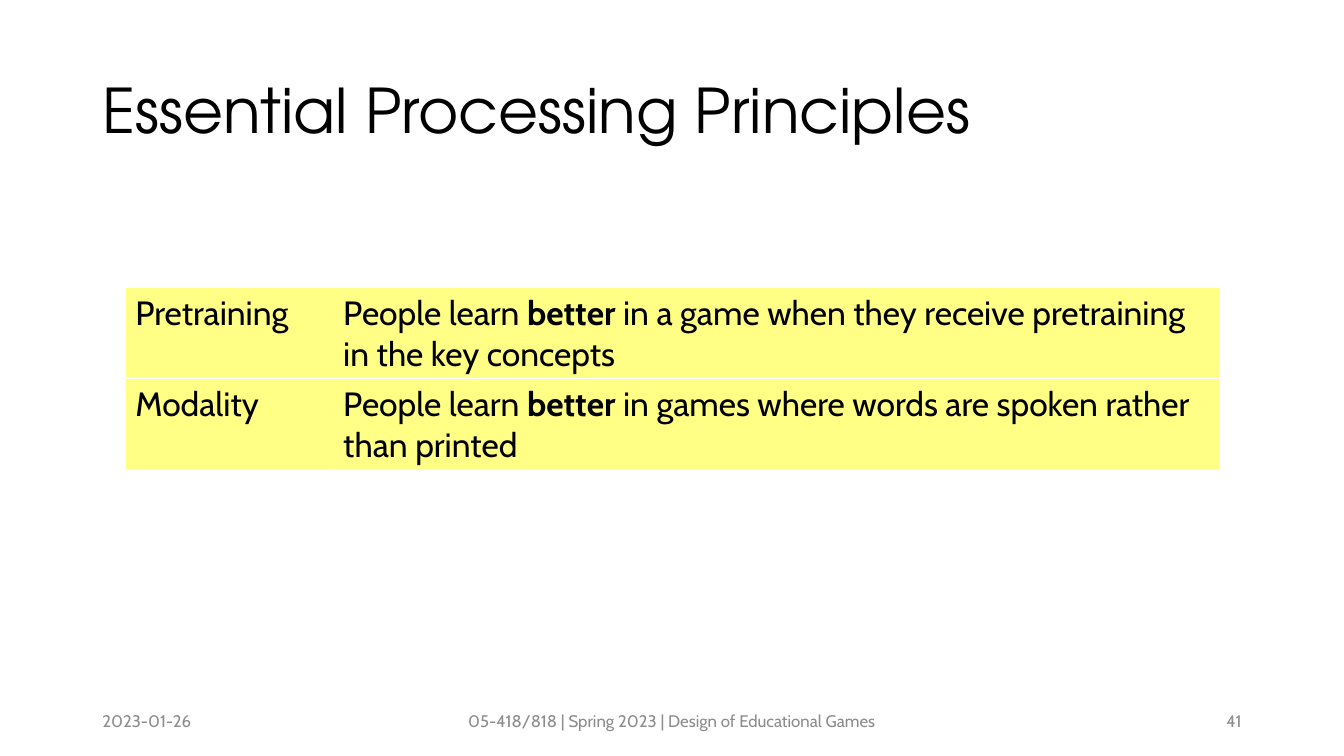
from lxml.etree import SubElement
from pptx import Presentation
from pptx.dml.color import RGBColor
from pptx.enum.text import MSO_ANCHOR, PP_ALIGN
from pptx.oxml.ns import qn
from pptx.util import Pt

BODY_FONT = "Cabin"
TITLE_FONT = "TeX Gyre Adventor"
BLACK, GREY, WHITE, YELLOW = "000000", "8C8C8C", "FFFFFF", "FFFF85"

PRINCIPLES = [
    ("Pretraining", " in a game when they receive pretraining in the key concepts"),
    ("Modality", " in games where words are spoken rather than printed"),
]
COLUMN_WIDTHS = (148.5, 633.5)
ROW_HEIGHT = 65


def color(hex_code):
    return RGBColor.from_string(hex_code)


def add_span(paragraph, text, size, font=BODY_FONT, ink=BLACK, bold=False):
    span = paragraph.add_run()
    span.text = text
    span.font.name = font
    span.font.size = Pt(size)
    span.font.bold = bold
    span.font.color.rgb = color(ink)


def add_text_box(page, left, top, width, height, align=PP_ALIGN.LEFT):
    """Add an empty, vertically centred box and return its first paragraph."""
    box = page.shapes.add_textbox(Pt(left), Pt(top), Pt(width), Pt(height))
    frame = box.text_frame
    frame.word_wrap = True
    frame.vertical_anchor = MSO_ANCHOR.MIDDLE
    paragraph = frame.paragraphs[0]
    paragraph.alignment = align
    return paragraph


def add_title(page, text):
    paragraph = add_text_box(page, 66, 28.8, 828, 104.4)
    paragraph.line_spacing = 0.9
    add_span(paragraph, text, 44, TITLE_FONT)


def add_footer(page, text, left, width, align):
    paragraph = add_text_box(page, left, 500.5, width, 28.8, align)
    add_span(paragraph, text, 12, ink=GREY)


def style_cell(cell):
    """Give the cell thin white borders and a yellow fill."""
    properties = cell._tc.get_or_add_tcPr()
    for side in ("a:lnL", "a:lnR", "a:lnT", "a:lnB"):
        line = SubElement(properties, qn(side), w=str(Pt(1)))
        fill = SubElement(line, qn("a:solidFill"))
        SubElement(fill, qn("a:srgbClr"), val=WHITE)
    cell.fill.solid()
    cell.fill.fore_color.rgb = color(YELLOW)


def add_principles_table(page):
    frame = page.shapes.add_table(
        len(PRINCIPLES), len(COLUMN_WIDTHS), Pt(89.5), Pt(205.5),
        Pt(sum(COLUMN_WIDTHS)), Pt(ROW_HEIGHT * len(PRINCIPLES)))
    table = frame.table
    table.first_row = False
    table.horz_banding = False
    for column, width in zip(table.columns, COLUMN_WIDTHS):
        column.width = Pt(width)
    for row, (name, condition) in zip(table.rows, PRINCIPLES):
        row.height = Pt(ROW_HEIGHT)
        name_cell, statement_cell = row.cells
        style_cell(name_cell)
        style_cell(statement_cell)
        add_span(name_cell.text_frame.paragraphs[0], name, 24)
        statement = statement_cell.text_frame.paragraphs[0]
        add_span(statement, "People learn ", 24)
        add_span(statement, "better", 24, bold=True)
        add_span(statement, condition, 24)


def main():
    deck = Presentation()
    deck.slide_width, deck.slide_height = Pt(960), Pt(540)
    page = deck.slides.add_slide(deck.slide_layouts[6])
    add_title(page, "Essential Processing Principles")
    add_principles_table(page)
    add_footer(page, "2023-01-26", 66, 216, PP_ALIGN.LEFT)
    add_footer(page, "05-418/818 | Spring 2023 | Design of Educational Games",
               318, 324, PP_ALIGN.CENTER)
    add_footer(page, "41", 678, 216, PP_ALIGN.RIGHT)
    deck.save("out.pptx")


if __name__ == "__main__":
    main()
